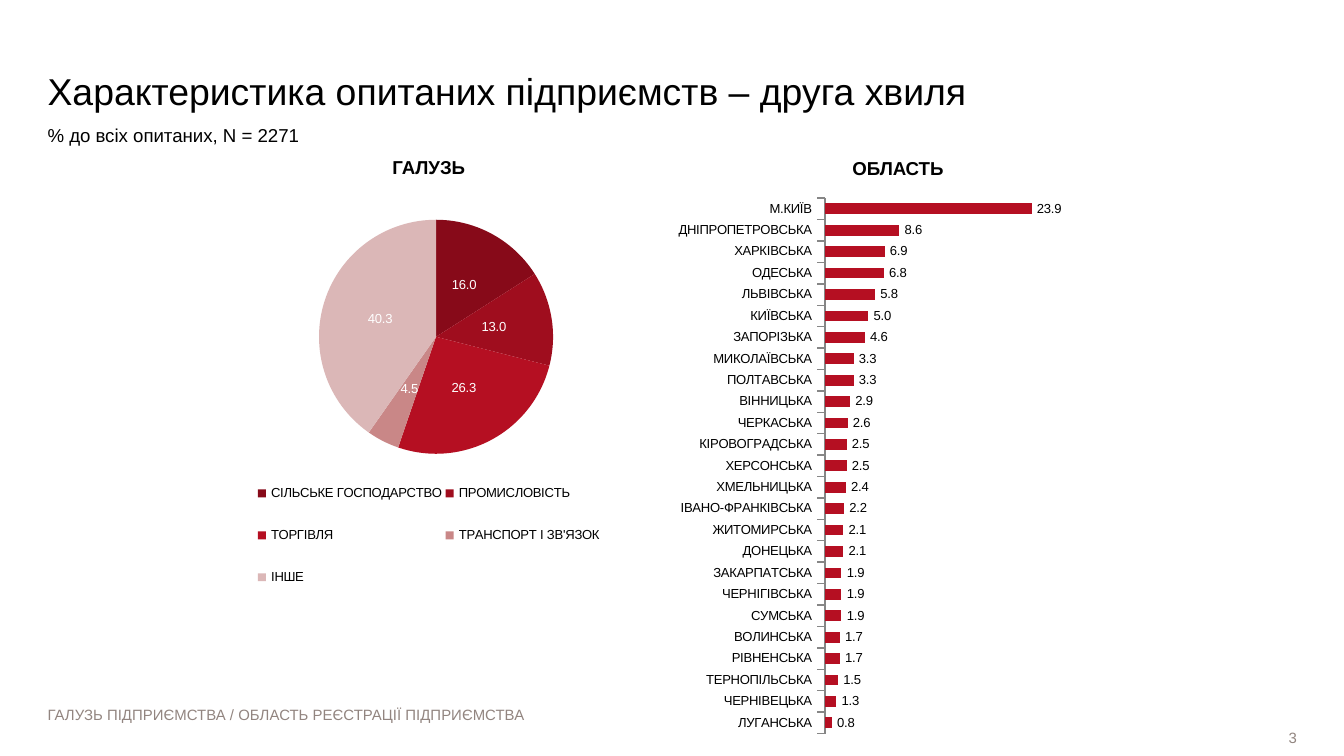
from dataclasses import dataclass

from lxml import etree
from pptx import Presentation
from pptx import util as u
from pptx.chart.data import CategoryChartData
from pptx.dml.color import RGBColor
from pptx.enum import chart as charts, text
from pptx.oxml.ns import qn


@dataclass(frozen=True)
class Theme:
    font: str = "Arial"
    ink: str = "000000"
    muted: str = "928580"
    paper: str = "FFFFFF"
    axis: str = "868686"
    accent: str = "B50F22"
    slices: tuple = ("870A19", "9F0D1E", "B50F22", "C98787", "DBB7B7")
    title: int = 20
    body: int = 10
    small: int = 8
    chart: int = 7


THEME = Theme()
INDUSTRIES = {
    "СІЛЬСЬКЕ ГОСПОДАРСТВО": 16.0, "ПРОМИСЛОВІСТЬ": 13.0, "ТОРГІВЛЯ": 26.3,
    "ТРАНСПОРТ І ЗВ'ЯЗОК": 4.5, "ІНШЕ": 40.3,
}
REGIONS = {
    "М.КИЇВ": 23.9, "ДНІПРОПЕТРОВСЬКА": 8.6, "ХАРКІВСЬКА": 6.9, "ОДЕСЬКА": 6.8,
    "ЛЬВІВСЬКА": 5.8, "КИЇВСЬКА": 5.0, "ЗАПОРІЗЬКА": 4.6, "МИКОЛАЇВСЬКА": 3.3,
    "ПОЛТАВСЬКА": 3.3, "ВІННИЦЬКА": 2.9, "ЧЕРКАСЬКА": 2.6, "КІРОВОГРАДСЬКА": 2.5,
    "ХЕРСОНСЬКА": 2.5, "ХМЕЛЬНИЦЬКА": 2.4, "ІВАНО-ФРАНКІВСЬКА": 2.2,
    "ЖИТОМИРСЬКА": 2.1, "ДОНЕЦЬКА": 2.1, "ЗАКАРПАТСЬКА": 1.9, "ЧЕРНІГІВСЬКА": 1.9,
    "СУМСЬКА": 1.9, "ВОЛИНСЬКА": 1.7, "РІВНЕНСЬКА": 1.7, "ТЕРНОПІЛЬСЬКА": 1.5,
    "ЧЕРНІВЕЦЬКА": 1.3, "ЛУГАНСЬКА": 0.8,
}


def apply(target, values):
    for name, value in values.items():
        setattr(target, name, value)


def paint(fill, color):
    fill.solid()
    fill.fore_color.rgb = RGBColor.from_string(color)


def make_layout(inner, percents):
    layout = etree.Element(qn("c:layout"))
    manual = etree.SubElement(layout, qn("c:manualLayout"))
    values = {"layoutTarget": "inner"} if inner else {}
    values |= {"xMode": "edge", "yMode": "edge"}
    values |= {name: percent / 100 for name, percent in zip("xywh", percents)}
    for name, value in values.items():
        etree.SubElement(manual, qn(f"c:{name}")).set("val", str(value))
    return layout


class Painter:
    def __init__(self, deck, theme):
        self.deck, self.theme = deck, theme
        self.page = deck.slides.add_slide(deck.slide_layouts[6])

    def place(self, left, top, width, height):
        across, down = self.deck.slide_width / 100, self.deck.slide_height / 100
        return [round(length) for length in
                (left * across, top * down, width * across, height * down)]

    def label(self, area, words, size, color=None, bold=False, align="LEFT",
              anchor="TOP", before=0):
        box = self.page.shapes.add_textbox(*self.place(*area))
        apply(box.text_frame, {
            "word_wrap": True, "vertical_anchor": getattr(text.MSO_ANCHOR, anchor),
            "margin_left": 0, "margin_right": 0, "margin_top": 0, "margin_bottom": 0,
        })
        para = box.text_frame.paragraphs[0]
        apply(para, {"alignment": getattr(text.PP_ALIGN, align),
                     "space_before": u.Pt(before)})
        span = para.add_run()
        span.text = words
        self.style(span.font, size, color, bold)

    def style(self, font, size, color=None, bold=False):
        apply(font, {"name": self.theme.font, "size": u.Pt(size), "bold": bold})
        font.color.rgb = RGBColor.from_string(color or self.theme.ink)

    def chart(self, kind, area, values, plot_area_percents, label_format):
        data = CategoryChartData()
        data.categories = list(values)
        data.add_series("Series 1", list(values.values()))
        chart = self.page.shapes.add_chart(kind, *self.place(*area), data).chart
        apply(chart, {"has_title": False, "has_legend": False})
        self.style(chart.font, self.theme.chart)
        plot = chart.plots[0]
        plot_area = plot._element.getparent()
        for old in plot_area.findall(qn("c:layout")):
            plot_area.remove(old)
        plot_area.insert(0, make_layout(True, plot_area_percents))
        plot.has_data_labels = True
        apply(plot.data_labels, {"show_value": True, "number_format": label_format,
                                 "number_format_is_linked": False})
        return chart, plot

    def pie(self, area, values, plot_area_percents, legend_percents):
        chart, plot = self.chart(charts.XL_CHART_TYPE.PIE, area, values,
                                 plot_area_percents, "###0.0")
        plot.vary_by_categories = True
        plot.data_labels.position = charts.XL_LABEL_POSITION.CENTER
        self.style(plot.data_labels.font, self.theme.chart, self.theme.paper)
        for index, color in enumerate(self.theme.slices):
            paint(plot.series[0].points[index].format.fill, color)
        chart.has_legend = True
        apply(chart.legend, {"position": charts.XL_LEGEND_POSITION.RIGHT,
                             "include_in_layout": False})
        self.style(chart.legend.font, self.theme.chart)
        legend = chart.legend._element
        for old in legend.findall(qn("c:layout")):
            legend.remove(old)
        legend.find(qn("c:overlay")).addprevious(make_layout(False, legend_percents))

    def bars(self, area, values, plot_area_percents, maximum):
        chart, plot = self.chart(charts.XL_CHART_TYPE.BAR_CLUSTERED, area, values,
                                 plot_area_percents, "0.0")
        apply(plot, {"vary_by_categories": False, "gap_width": 100})
        plot.data_labels.position = charts.XL_LABEL_POSITION.OUTSIDE_END
        self.style(plot.data_labels.font, self.theme.chart)
        paint(plot.series[0].format.fill, self.theme.accent)
        apply(chart.category_axis, {
            "reverse_order": True, "has_major_gridlines": False,
            "major_tick_mark": charts.XL_TICK_MARK.OUTSIDE,
            "minor_tick_mark": charts.XL_TICK_MARK.NONE,
        })
        paint(chart.category_axis.format.line.fill, self.theme.axis)
        apply(chart.value_axis, {"visible": False, "has_major_gridlines": False,
                                 "minimum_scale": 0, "maximum_scale": maximum})


def main():
    deck = Presentation()
    width = u.Inches(10)
    apply(deck, {"slide_width": width, "slide_height": width * 9 // 16})
    painter = Painter(deck, THEME)
    painter.label((82.3, 96.18, 14.2, 2.84), "3", THEME.small, THEME.muted,
                  align="RIGHT", anchor="MIDDLE")
    painter.label((3.54, 3.73, 94.5, 11.2),
                  "Характеристика опитаних підприємств – друга хвиля",
                  THEME.title, anchor="BOTTOM")
    painter.label((3.54, 93.4, 92.9, 2.84),
                  "ГАЛУЗЬ ПІДПРИЄМСТВА / ОБЛАСТЬ РЕЄСТРАЦІЇ ПІДПРИЄМСТВА",
                  THEME.small, THEME.muted)
    painter.label((3.54, 16.36, 92.9, 4.27), "% до всіх опитаних, N = 2271",
                  THEME.body, before=3)
    for words, left, top in (("ГАЛУЗЬ", 18.5, 20.62), ("ОБЛАСТЬ ", 53.6, 20.8)):
        painter.label((left, top, 26.8, 5.51), words, THEME.body, bold=True,
                      align="CENTER", before=3)
    painter.pie((18.9, 23.64, 26, 61.69), INDUSTRIES,
                (17.1, 8.8, 70, 50.2), (0, 60, 100, 33))
    painter.bars((49.2, 23.82, 31.5, 75.2), REGIONS,
                 (38.7, 3.2, 61.3, 94.2), 30)
    deck.save("out.pptx")


if __name__ == "__main__":
    main()
